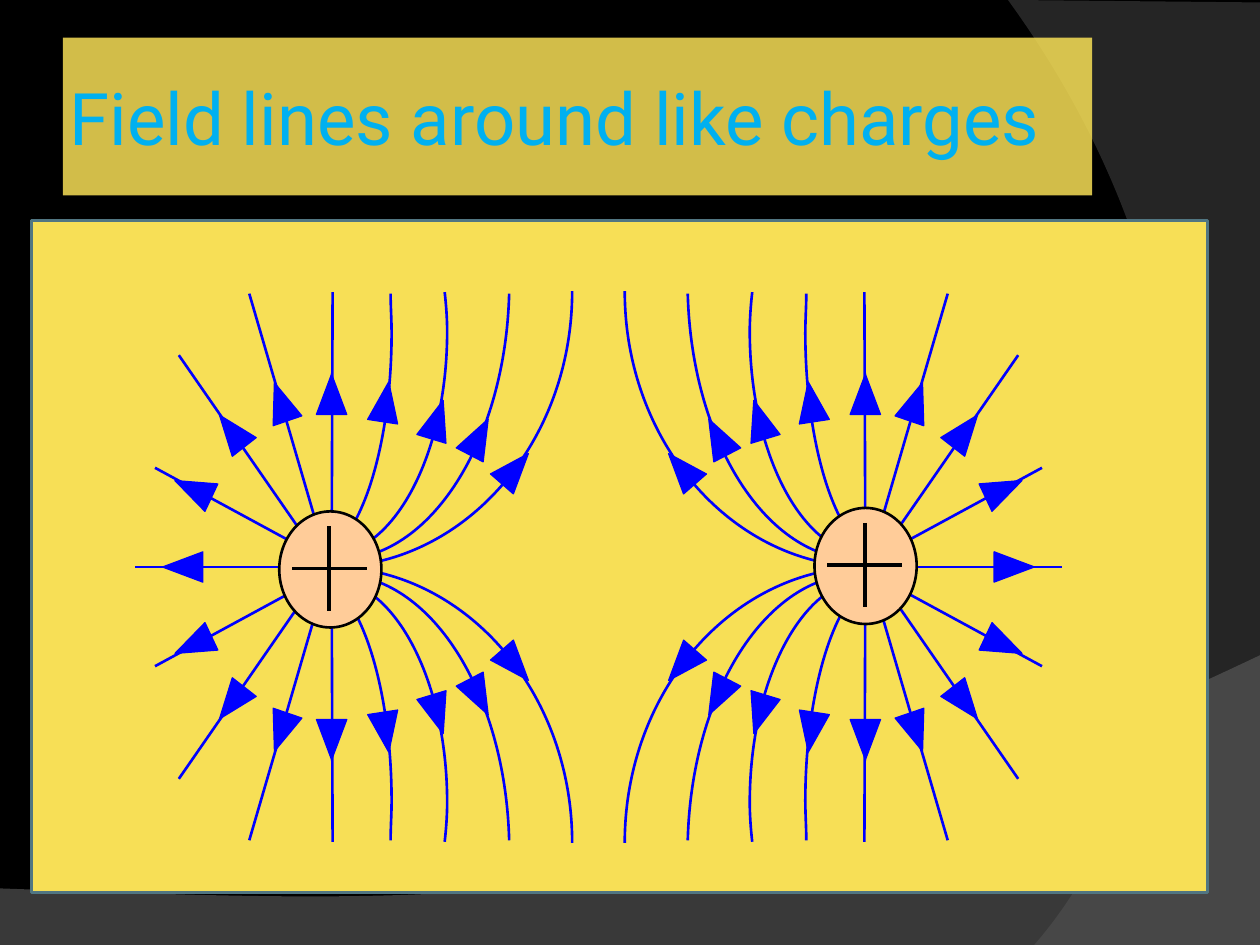
from collections import namedtuple
from dataclasses import dataclass
from itertools import product

from lxml.etree import SubElement
from pptx import Presentation
from pptx.dml.color import RGBColor
from pptx.enum.shapes import MSO_CONNECTOR, MSO_SHAPE
from pptx.enum.text import MSO_ANCHOR, PP_ALIGN
from pptx.oxml.ns import qn
from pptx.util import Cm, Pt

Box = namedtuple("Box", "left top width height")


@dataclass(frozen=True)
class Theme:
    font: str = "Roboto"
    title_size: float = 41.4
    title: str = "00B0F0"
    background: str = "000000"
    floor: str = "7F7F7F"
    side: str = "5E5E5E"
    panel: str = "F7DF56"
    panel_edge: str = "517682"
    field: str = "0000FF"
    charge: str = "FFCC99"
    ink: str = "000000"


THEME = Theme()

# One quadrant of the field: cm away from the centre, sideways and up or down.
# Each curve is a start point followed by three points per Bezier segment.
CURVES = [
    [(0.53, 5.56), (0.53, 2.49), (2.72, 0), (5.41, 0)],
    [(1.8, 5.51), (1.88, 2.51), (3.4, 0.15), (5.23, 0.15)],
    [(3.1, 5.54), (3.07, 5.28), (3.05, 5), (3.05, 4.75),
     (3.05, 2.24), (4.14, 0.23), (5.46, 0.23)],
    [(4.19, 5.51), (4.19, 5.26), (4.17, 4.98), (4.17, 4.72),
     (4.17, 2.95), (4.55, 1.32), (5.13, 0.58)],
]
RAYS = [
    ((5.38, 0.08), (5.36, 5.54)),
    ((5.46, 0.1), (7.04, 5.51)),
    ((5.64, 0.2), (8.46, 4.27)),
    ((5.66, 0.22), (8.94, 2)),
]
AXIS_RAY = ((5.46, 0), (9.35, 0))
# Sideways, up, and turn in degrees
ARROWS = [
    (5.38, 3.48, 0), (1.68, 1.98, 41.1), (4.29, 3.33, 8.7), (3.25, 2.97, 16.9),
    (2.41, 2.62, 27.4), (6.4, 3.33, -19), (7.39, 2.74, -37.9), (8.17, 1.57, -64.9),
]
AXIS_ARROW = (8.38, 0, -90)
ARROW_WIDTH, ARROW_LENGTH = 0.61, 0.81


def paint(shape, fill=None, alpha=None, line=None, width=0.75):
    shape.shadow.inherit = False
    if fill:
        shape.fill.solid()
        shape.fill.fore_color.rgb = RGBColor.from_string(fill)
        if alpha:
            color = shape.fill._xPr.find(qn("a:solidFill"))[0]
            SubElement(color, qn("a:alpha"), val=str(alpha * 1000))
    else:
        shape.fill.background()
    if line:
        shape.line.color.rgb = RGBColor.from_string(line)
        shape.line.width = Pt(width)
    else:
        shape.line.fill.background()
    return shape


def add_preset(slide, preset, box, **style):
    return paint(slide.shapes.add_shape(preset, *map(Cm, box)), **style)


def add_line(slide, start, end, color, width):
    line = slide.shapes.add_connector(MSO_CONNECTOR.STRAIGHT, *map(Cm, start + end))
    line.line.color.rgb = RGBColor.from_string(color)
    line.line.width = Pt(width)
    SubElement(line._element.spPr, qn("a:effectLst"))


def add_curve(slide, controls, corners=(), **style):
    """Chain of cubic Beziers, closed through straight corners if there are any."""
    anchors = [(Cm(x), Cm(y)) for x, y in controls[::3] + list(corners)]
    builder = slide.shapes.build_freeform(*anchors[0])
    builder.add_line_segments(anchors[1:], close=bool(corners))
    shape = builder.convert_to_shape()
    outline = next(shape._element.iter(qn("a:path")))
    for index, straight in enumerate(outline.findall(qn("a:lnTo"))[:len(controls) // 3]):
        bezier = SubElement(outline, qn("a:cubicBezTo"))
        for x, y in controls[3 * index + 1:3 * index + 4]:
            SubElement(bezier, qn("a:pt"), x=str(Cm(x) - shape.left), y=str(Cm(y) - shape.top))
        outline.replace(straight, bezier)
    return paint(shape, **style)


def add_text(shape, text, *, size, color, align=PP_ALIGN.LEFT, inset=0.13):
    frame = shape.text_frame
    frame.word_wrap = True
    frame.vertical_anchor = MSO_ANCHOR.MIDDLE
    frame.margin_left = frame.margin_right = Cm(inset)
    frame.margin_top = frame.margin_bottom = Cm(inset)
    paragraph = frame.paragraphs[0]
    paragraph.alignment = align
    run = paragraph.add_run()
    run.text = text
    run.font.name = THEME.font
    run.font.size = Pt(size)
    run.font.color.rgb = RGBColor.from_string(color)


def draw_backdrop(slide, box):
    slide.background.fill.solid()
    slide.background.fill.fore_color.rgb = RGBColor.from_string(THEME.background)
    right, bottom = box.left + box.width, box.top + box.height
    # Sweep along the floor
    add_curve(slide,
              [(right, bottom - 5.84), (right - 11.2, bottom - 0.53),
               (right - 15.47, bottom - 0.79), (box.left, bottom - 1.14)],
              corners=[(box.left, bottom), (right, bottom)],
              fill=THEME.floor, alpha=45)
    # Sweep down the right side
    add_curve(slide,
              [(right - 4.55, bottom), (right - 1.65, bottom - 3.33),
               (right + 0.46, box.top + 7.62), (right - 5.08, box.top)],
              corners=[(right, box.top + 0.05), (right, bottom)],
              fill=THEME.side, alpha=40)


def draw_title(slide, box):
    banner = add_preset(slide, MSO_SHAPE.RECTANGLE, box, fill=THEME.panel, alpha=85)
    add_text(banner, "Field lines around like charges",
             size=THEME.title_size, color=THEME.title)


def draw_quadrant(slide, center, side, rise, with_axis):
    """side is -1 for left, 1 for right; rise is -1 for up, 1 for down."""
    def place(point):
        return center[0] + side * point[0], center[1] + rise * point[1]

    for curve in CURVES:
        add_curve(slide, [place(point) for point in curve], line=THEME.field, width=1.5)
    for start, end in RAYS + [AXIS_RAY] * with_axis:
        add_line(slide, place(start), place(end), THEME.field, 1.5)
    for across, up, turn in ARROWS + [AXIS_ARROW] * with_axis:
        x, y = place((across, up))
        box = Box(x - ARROW_WIDTH / 2, y - ARROW_LENGTH / 2, ARROW_WIDTH, ARROW_LENGTH)
        arrow = add_preset(slide, MSO_SHAPE.ISOSCELES_TRIANGLE, box,
                           fill=THEME.field, line=THEME.field)
        upward_turn = -side * turn
        arrow.rotation = (upward_turn if rise < 0 else 180 - upward_turn) % 360


def draw_charge(slide, box):
    add_preset(slide, MSO_SHAPE.OVAL, box, fill=THEME.charge, line=THEME.ink, width=1.5)
    x, y = box.left + box.width / 2 - 0.02, box.top + box.height / 2 - 0.02
    add_line(slide, (x - 0.75, y), (x + 0.75, y), THEME.ink, 2.25)
    add_line(slide, (x, y - 0.85), (x, y + 0.85), THEME.ink, 2.25)


def draw_field(slide, box):
    center = box.left + box.width / 2, box.top + box.height / 2
    for side, rise in product((-1, 1), (-1, 1)):
        draw_quadrant(slide, center, side, rise, with_axis=rise < 0)
    for left, top in ((2.66, 4.44), (13.45, 4.37)):
        draw_charge(slide, Box(box.left + left, box.top + top, 2.06, 2.34))


def main():
    deck = Presentation()
    deck.slide_width, deck.slide_height = Cm(25.4), Cm(19.05)
    slide = deck.slides.add_slide(deck.slide_layouts[6])
    draw_backdrop(slide, Box(0, 0, 25.4, 19.05))
    add_preset(slide, MSO_SHAPE.RECTANGLE, Box(0.64, 4.45, 23.7, 13.54),
               fill=THEME.panel, line=THEME.panel_edge, width=1.5)
    draw_title(slide, Box(1.27, 0.76, 20.75, 3.18))
    draw_field(slide, Box(2.97, 5.87, 18.19, 11.12))
    deck.save("out.pptx")


if __name__ == "__main__":
    main()
